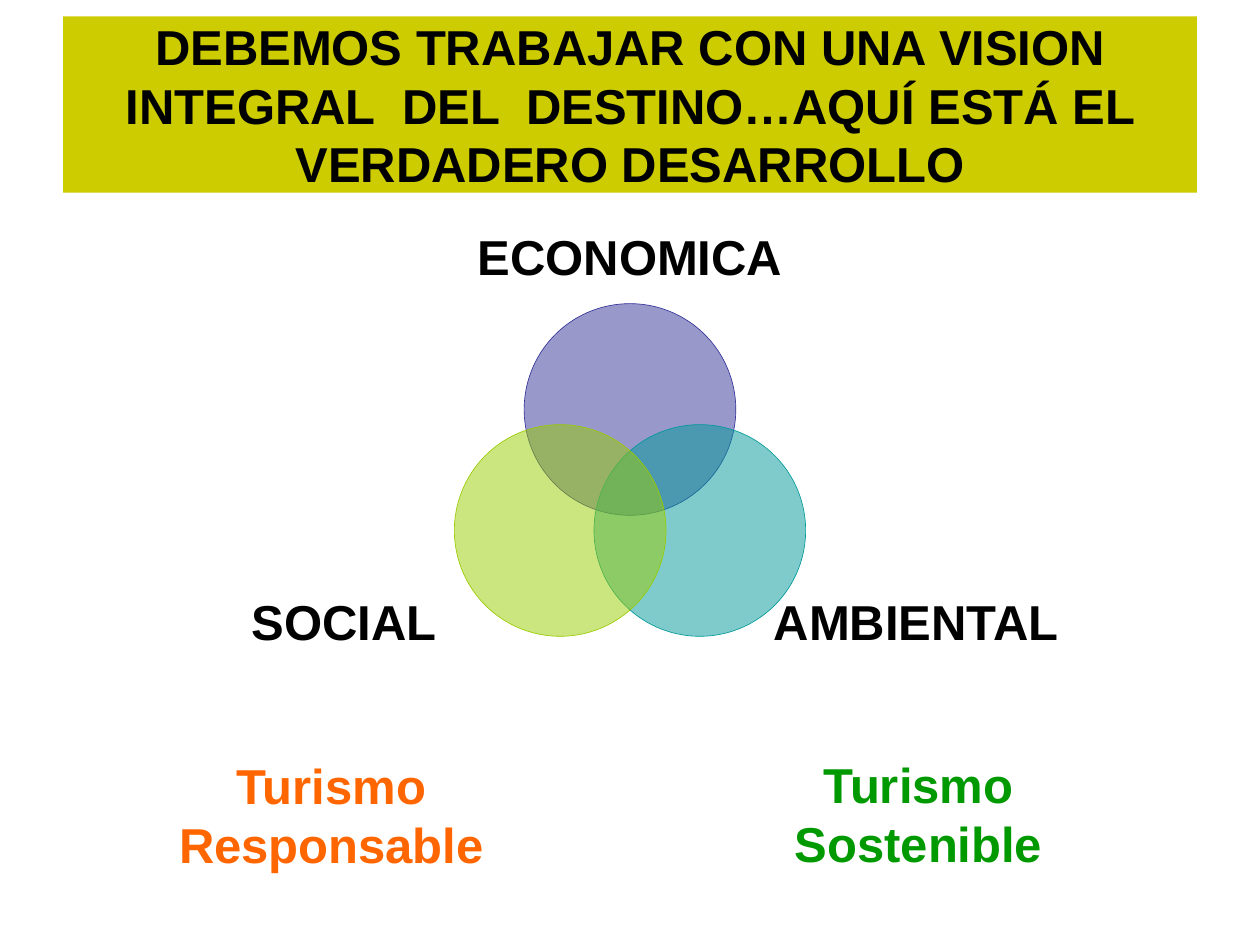
from math import cos, radians, sin

from lxml import etree
from pptx import Presentation
from pptx.dml.color import RGBColor
from pptx.enum.shapes import MSO_SHAPE
from pptx.enum.text import MSO_ANCHOR, MSO_AUTO_SIZE, PP_ALIGN
from pptx.oxml.ns import qn
from pptx.util import Inches, Pt

OVAL = MSO_SHAPE.OVAL
MIDDLE, TOP = MSO_ANCHOR.MIDDLE, MSO_ANCHOR.TOP
CENTER = PP_ALIGN.CENTER
NO_FIT = MSO_AUTO_SIZE.NONE

BLACK = RGBColor(0x00, 0x00, 0x00)
MUSTARD = RGBColor(0xCC, 0xCC, 0x00)
INDIGO = RGBColor(0x33, 0x33, 0x99)
TEAL = RGBColor(0x00, 0x99, 0x99)
LIME = RGBColor(0x99, 0xCC, 0x00)
GREEN = RGBColor(0x00, 0x99, 0x00)
ORANGE = RGBColor(0xFF, 0x66, 0x00)

TITLE = ("DEBEMOS TRABAJAR CON UNA VISION INTEGRAL  DEL  DESTINO…"
         "AQUÍ ESTÁ EL VERDADERO DESARROLLO")
# label, circle colour, angle in degrees, label left and top
DIMENSIONS = [
    ("ECONOMICA", INDIGO, -90, 4.16, 1.82),
    ("AMBIENTAL", TEAL, 30, 6.43, 4.72),
    ("SOCIAL", LIME, 150, 1.89, 4.72),
]
# text, colour, left, top, width
OUTCOMES = [
    ("Turismo Sostenible", GREEN, 6.1, 5.94, 2.38),
    ("Turismo Responsable", ORANGE, 1.28, 5.95, 2.7),
]
VENN_X, VENN_Y = 5, 3.89
ORBIT = 0.64
DIAMETER = 1.68
LABEL_HEIGHT = 0.42


def write(shape, text, color, anchor, wrap=True):
    frame = shape.text_frame
    frame.text = text
    frame.auto_size = NO_FIT
    frame.word_wrap = wrap
    frame.vertical_anchor = anchor
    paragraph = frame.paragraphs[0]
    paragraph.alignment = CENTER
    font = paragraph.runs[0].font
    font.name, font.size, font.bold = "Arial", Pt(28), True
    font.color.rgb = color
    return frame


def add_circle(page, color, angle):
    left = VENN_X + ORBIT * cos(radians(angle)) - DIAMETER / 2
    top = VENN_Y + ORBIT * sin(radians(angle)) - DIAMETER / 2
    circle = page.shapes.add_shape(OVAL, Inches(left), Inches(top),
                                   Inches(DIAMETER), Inches(DIAMETER))
    circle.shadow.inherit = False
    circle.fill.solid()
    circle.fill.fore_color.rgb = color
    fill_color = circle.fill._xPr.find(qn("a:solidFill"))[0]
    etree.SubElement(fill_color, qn("a:alpha"), val="50000")
    circle.line.color.rgb = color
    circle.line.width = Pt(0.37)


def add_text(page, text, color, left, top, width, height, anchor, wrap=True):
    box = page.shapes.add_textbox(Inches(left), Inches(top),
                                  Inches(width), Inches(height))
    return write(box, text, color, anchor, wrap)


def main():
    deck = Presentation()
    deck.slide_width, deck.slide_height = Inches(10), Inches(7.5)
    page = deck.slides.add_slide(deck.slide_layouts[5])

    title = page.shapes.title
    title.left, title.top = Inches(0.5), Inches(0.13)
    title.width, title.height = Inches(9), Inches(1.4)
    title.fill.solid()
    title.fill.fore_color.rgb = MUSTARD
    write(title, TITLE, BLACK, MIDDLE)

    for label, color, angle, left, top in DIMENSIONS:
        add_circle(page, color, angle)
        frame = add_text(page, label, BLACK, left, top, DIAMETER,
                         LABEL_HEIGHT, MIDDLE, wrap=False)
        frame.margin_left = frame.margin_right = 0
        frame.margin_top = frame.margin_bottom = 0

    for text, color, left, top, width in OUTCOMES:
        add_text(page, text, color, left, top, width, 1.03, TOP)

    deck.save("out.pptx")


if __name__ == "__main__":
    main()
